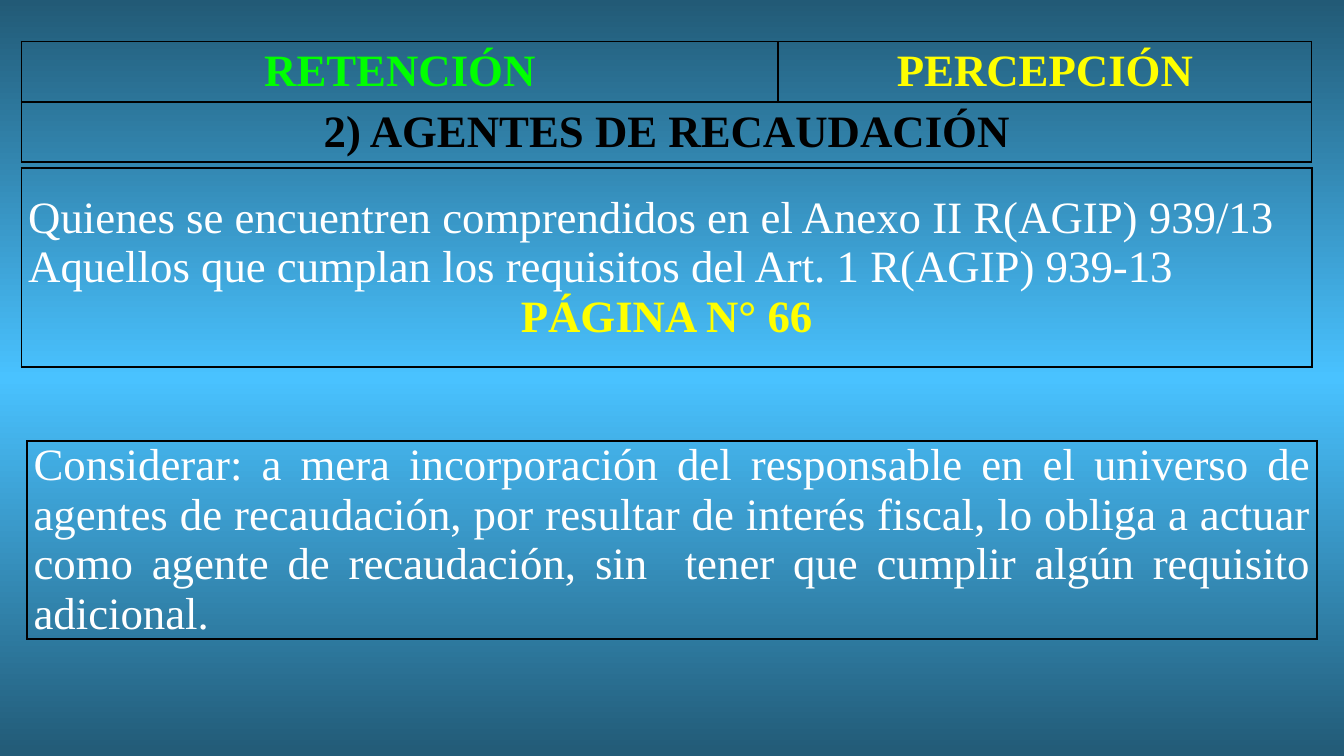
from copy import deepcopy

from pptx import Presentation
from pptx.dml.color import RGBColor
from pptx.enum.text import MSO_ANCHOR as Anchor, PP_ALIGN as Align
from pptx.oxml import parse_xml
from pptx.oxml.ns import nsdecls, qn
from pptx.util import Inches, Pt

GREEN, YELLOW, BLACK, WHITE = "00FF00", "FFFF00", "000000", "FFFFFF"
DARK, LIGHT = "225A76", "49C2FF"


def color(target, code):
    target.rgb = RGBColor.from_string(code)


def write(para, text, tint=WHITE, bold=False, align=Align.JUSTIFY,
          size=24, font="Times New Roman"):
    para.alignment = align
    run = para.add_run()
    run.text = text
    run.font.name = font
    run.font.size = Pt(size)
    run.font.bold = bold
    color(run.font.color, tint)


class Deck:
    edge = BLACK
    width = 1

    def __init__(self, wide, high):
        self.show = Presentation()
        self.show.slide_width = Inches(wide)
        self.show.slide_height = Inches(high)
        self.slide = self.show.slides.add_slide(self.show.slide_layouts[6])

    def backdrop(self, codes):
        fill = self.slide.background.fill
        fill.gradient()
        fill.gradient_angle = 270
        stops = self.slide.element.find(".//" + qn("a:gsLst"))
        while len(stops) < len(codes):
            stops.append(deepcopy(stops[0]))
        for i, (stop, code) in enumerate(zip(fill.gradient_stops, codes)):
            color(stop.color, code)
            stop.position = i / (len(codes) - 1)

    def border(self, cell):
        props = cell._tc.get_or_add_tcPr()
        for side in "LRTB":
            props.append(parse_xml(
                f'<a:ln{side} {nsdecls("a")} w="{Pt(self.width)}"><a:solidFill>'
                f'<a:srgbClr val="{self.edge}"/></a:solidFill></a:ln{side}>'))

    def table(self, left, top, cols, rows, pad=(0.05, 0), anchor=Anchor.MIDDLE):
        frame = self.slide.shapes.add_table(
            len(rows), len(cols), Inches(left), Inches(top),
            Inches(sum(cols)), Inches(sum(rows)))
        grid = frame.table
        grid.first_row = grid.horz_banding = False
        for col, wide in zip(grid.columns, cols):
            col.width = Inches(wide)
        for row, high in zip(grid.rows, rows):
            row.height = Inches(high)
        for cell in grid.iter_cells():
            self.border(cell)
            cell.fill.background()
            cell.vertical_anchor = anchor
            cell.margin_left = cell.margin_right = Inches(pad[0])
            cell.margin_top = cell.margin_bottom = Inches(pad[1])
        return grid

    def text(self, cell, *lines):
        frame = cell.text_frame
        for i, (text, style) in enumerate(lines):
            para = frame.add_paragraph() if i else frame.paragraphs[0]
            write(para, text, **style)

    def save(self):
        self.show.save("out.pptx")


def title(tint):
    return dict(tint=tint, bold=True, align=Align.CENTER)


def main():
    deck = Deck(10, 10 * 9 / 16)
    deck.backdrop([DARK, LIGHT, DARK])

    head = deck.table(0.16, 0.31, [5.63, 3.97], [0.44, 0.44],
                      pad=(0.1, 0.04), anchor=Anchor.TOP)
    head.cell(1, 0).merge(head.cell(1, 1))
    deck.text(head.cell(0, 0), ("RETENCIÓN", title(GREEN)))
    deck.text(head.cell(0, 1), ("PERCEPCIÓN", title(YELLOW)))
    deck.text(head.cell(1, 0), ("2) AGENTES DE RECAUDACIÓN", title(BLACK)))

    agents = deck.table(0.16, 1.25, [9.6], [1.48])
    deck.text(
        agents.cell(0, 0),
        ("Quienes se encuentren comprendidos en el Anexo II R(AGIP) 939/13", {}),
        ("Aquellos que cumplan los requisitos del Art. 1 R(AGIP) 939-13", {}),
        ("PÁGINA N° 66", title(YELLOW)))

    note = deck.table(0.2, 3.28, [9.6], [1.47])
    deck.text(note.cell(0, 0), (
        "Considerar: a mera incorporación del responsable en el universo de "
        "agentes de recaudación, por resultar de interés fiscal, lo obliga a "
        "actuar como agente de recaudación, sin  tener que cumplir algún "
        "requisito adicional.", {}))
    deck.save()


if __name__ == "__main__":
    main()
